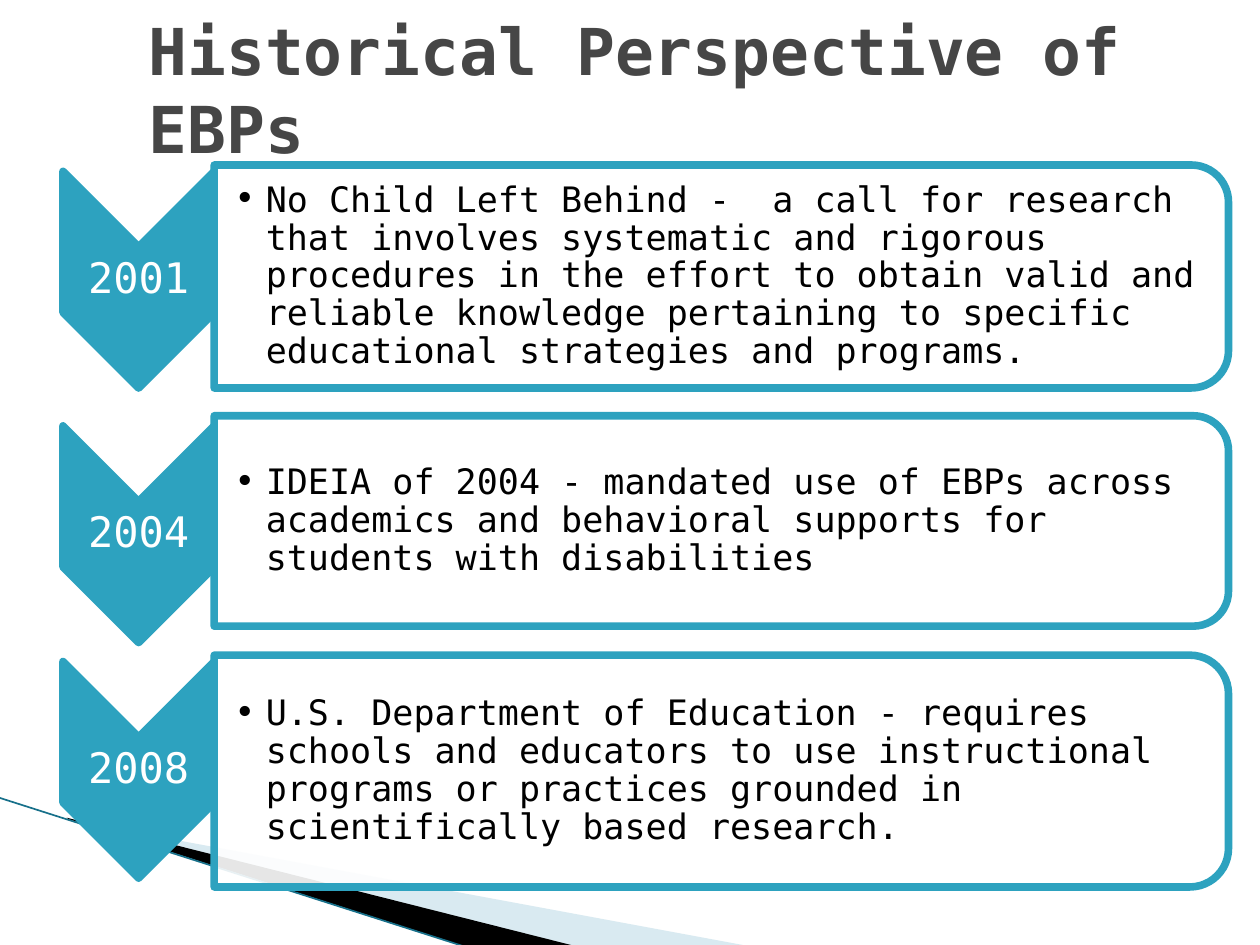
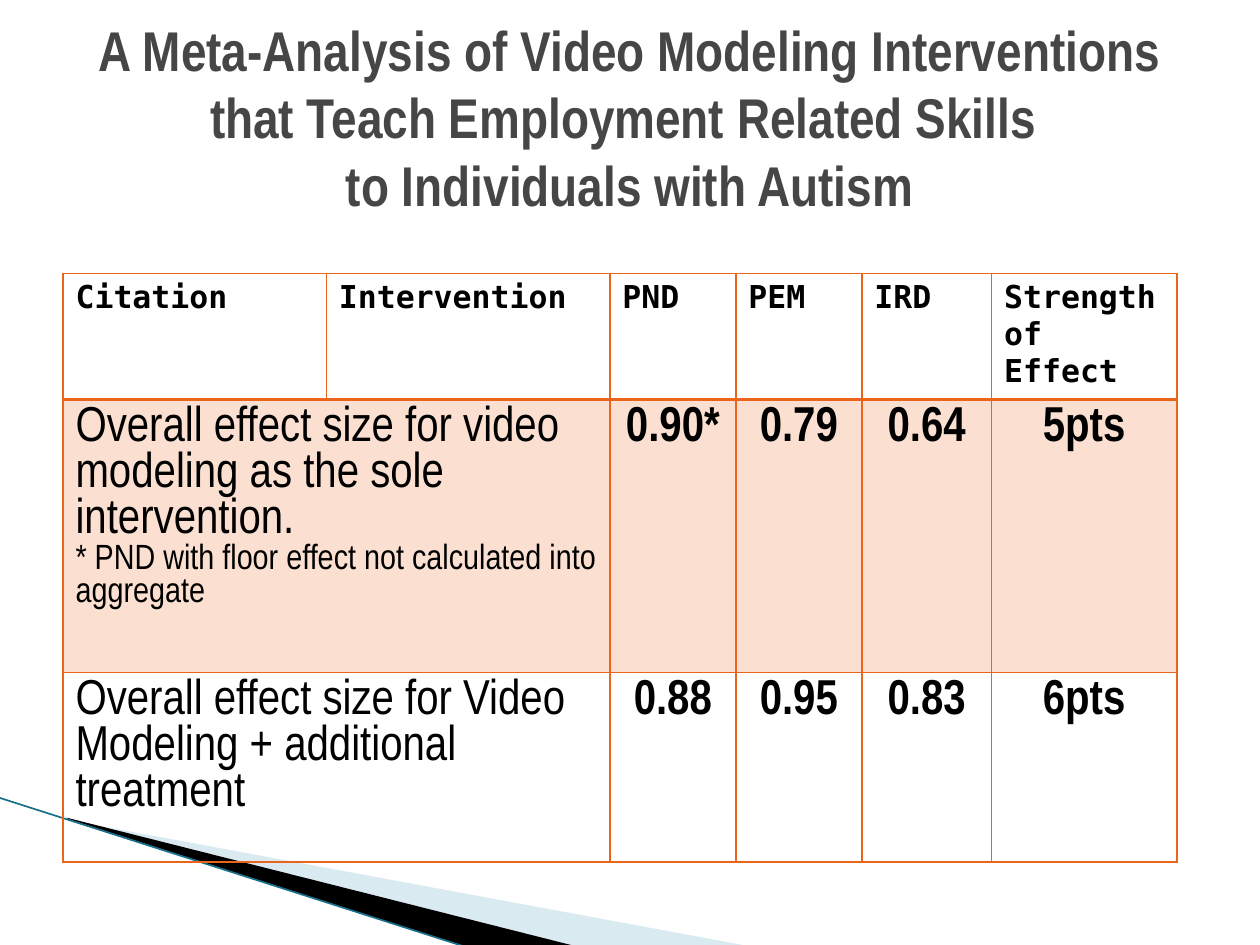
import lxml.etree
import pptx
import pptx.dml.color
import pptx.enum.shapes
import pptx.enum.text
import pptx.oxml.ns
import pptx.util

Inches = pptx.util.Inches
Pt = pptx.util.Pt
qn = pptx.oxml.ns.qn
Shape = pptx.enum.shapes.MSO_SHAPE
Align = pptx.enum.text.PP_ALIGN
Anchor = pptx.enum.text.MSO_ANCHOR

MONO = "DejaVu Sans Mono"
NARROW = "Arial Narrow"
COLORS = {
    "title": "464646", "text": "000000", "white": "FFFFFF",
    "teal": "2DA2BF", "pale": "A0CBDC", "black": "000000", "edge": "17708A",
    "orange": "EB641B", "peach": "FBE0D1",
}


def paint(shape, fill, opacity=100, line=None):
    """Fill a shape, with a line in the given colour or none."""
    shape.shadow.inherit = False
    shape.fill.solid()
    shape.fill.fore_color.rgb = pptx.dml.color.RGBColor.from_string(COLORS[fill])
    if opacity < 100:
        color = shape.element.spPr.find(qn("a:solidFill"))[0]
        lxml.etree.SubElement(color, qn("a:alpha"), val=str(opacity * 1000))
    if line:
        shape.line.color.rgb = pptx.dml.color.RGBColor.from_string(COLORS[line])
        shape.line.width = Pt(4.33)
    else:
        shape.line.fill.background()


def write(frame, texts, name, sizes, color="text", bold=False,
          align=Align.LEFT, spacing=1.0, bullet=False):
    """Write one paragraph for each text, each in its own size."""
    frame.word_wrap = True
    for number, (text, size) in enumerate(zip(texts, sizes)):
        para = frame.add_paragraph() if number else frame.paragraphs[0]
        para.text = text
        para.alignment = align
        para.line_spacing = spacing
        if bullet:
            settings = para._p.get_or_add_pPr()
            settings.set("marL", str(Inches(0.25)))
            settings.set("indent", str(-Inches(0.25)))
            lxml.etree.SubElement(settings, qn("a:buFont"), typeface=name)
            lxml.etree.SubElement(settings, qn("a:buChar"), char="•")
        for span in para.runs:
            values = {"name": name, "size": Pt(size), "bold": bold}
            for key, value in values.items():
                setattr(span.font, key, value)
            span.font.color.rgb = pptx.dml.color.RGBColor.from_string(COLORS[color])


deck = pptx.Presentation()
deck.slide_width = Inches(10)
deck.slide_height = Inches(7.5)

# Shared page: swoosh in the lower left corner and title
swooshes = [
    ("pale", 40, [(0.55, 6.51), (5.95, 7.51), (4.56, 7.51), (0.55, 6.5)]),
    ("black", 100, [(0.53, 6.49), (4.57, 7.51), (3.72, 7.52), (0.54, 6.5)]),
]
titles = [
    ("Historical Perspective of EBPs",
     (1.08, 0.33, 8.17, 0.75), MONO, 36.9, Align.LEFT),
    ("A Meta-Analysis of Video Modeling Interventions that Teach Employment "
     "Related Skills \vto Individuals with Autism",
     (0.5, 0.3, 9, 1.25), NARROW, 32, Align.CENTER),
]
pages = []
for title, place, font_name, size, align in titles:
    page = deck.slides.add_slide(deck.slide_layouts[6])
    pages.append(page)
    for fill, opacity, corners in swooshes:
        points = [(Inches(x), Inches(y)) for x, y in corners]
        outline = page.shapes.build_freeform(*points[0])
        outline.add_line_segments(points[1:], close=True)
        paint(outline.convert_to_shape(), fill, opacity)
    edge = page.shapes.add_connector(
        pptx.enum.shapes.MSO_CONNECTOR.STRAIGHT,
        Inches(-0.01), Inches(6.33), Inches(3.71), Inches(7.52))
    edge.line.color.rgb = pptx.dml.color.RGBColor.from_string(COLORS["edge"])
    edge.line.width = Pt(0.95)
    lxml.etree.SubElement(edge._element.spPr, qn("a:effectLst"))
    box = page.shapes.add_textbox(*map(Inches, place))
    box.text_frame.vertical_anchor = Anchor.MIDDLE
    write(box.text_frame, [title], font_name, [size], "title", True, align)

timeline_page, results_page = pages

# Timeline: a year chevron and a card for each milestone
card_left, card_width = 1.7, 8.05
chevron_length, chevron_width = 1.72, 1.2
milestones = [
    ("2001", 1.36, 1.31, 1.77,
     "No Child Left Behind -  a call for research that involves systematic and "
     "rigorous procedures in the effort to obtain valid and reliable knowledge "
     "pertaining to specific educational strategies and programs."),
    ("2004", 3.38, 3.3, 1.67,
     "IDEIA of 2004 - mandated use of EBPs across academics and behavioral "
     "supports for students with disabilities"),
    ("2008", 5.25, 5.2, 1.84,
     "U.S. Department of Education - requires schools and educators to use "
     "instructional programs or practices grounded in scientifically based "
     "research."),
]
for year, chevron_top, card_top, card_height, text in milestones:
    # Both shapes are turned a quarter, so they are placed by their centres
    turned = [
        (Shape.CHEVRON, 1.1, chevron_top + chevron_length / 2,
         chevron_length, chevron_width, "teal", 100),
        (Shape.ROUND_2_SAME_RECTANGLE, card_left + card_width / 2,
         card_top + card_height / 2, card_height, card_width, "white", 90),
    ]
    for kind, center_x, center_y, width, height, fill, opacity in turned:
        shape = timeline_page.shapes.add_shape(
            kind, Inches(center_x - width / 2), Inches(center_y - height / 2),
            Inches(width), Inches(height))
        shape.rotation = 90
        paint(shape, fill, opacity, "teal")

    labels = [
        (year, (0.5, chevron_top + 0.6, 1.2, 0.52), 0.02, 0.02,
         {"sizes": [24], "color": "white", "align": Align.CENTER}),
        (text, (card_left, card_top + 0.09, 7.96, card_height - 0.18), 0.16, 0.01,
         {"sizes": [20], "bullet": True}),
    ]
    for words, place, left_inset, inset, style in labels:
        box = timeline_page.shapes.add_textbox(*map(Inches, place))
        frame = box.text_frame
        frame.vertical_anchor = Anchor.MIDDLE
        for side in ("left", "top", "right", "bottom"):
            setattr(frame, "margin_" + side,
                    Inches(left_inset if side == "left" else inset))
        write(frame, [words], MONO, spacing=0.9, **style)

# Results table: each cell holds a list of paragraphs, rows grow with their text
column_widths = [2.09, 2.25, 1, 1, 1.03, 1.47]
row_heights = [0.75, 1, 1.19]
rows = [
    [["Citation"], ["Intervention"], ["PND"], ["PEM"], ["IRD"],
     ["Strength of Effect"]],
    [["Overall effect size for video modeling as the sole intervention.",
      "* PND with floor effect not calculated into aggregate"],
     [], ["0.90*"], ["0.79"], ["0.64"], ["5pts"]],
    [["Overall effect size for Video Modeling + additional treatment"],
     [], ["0.88"], ["0.95"], ["0.83"], ["6pts"]],
]
table = results_page.shapes.add_table(
    len(rows), len(column_widths), Inches(0.5), Inches(2.17),
    Inches(sum(column_widths)), Inches(sum(row_heights))).table
table.first_row = False
table.horz_banding = False
for column, width in zip(table.columns, column_widths):
    column.width = Inches(width)
for row, height in zip(table.rows, row_heights):
    row.height = Inches(height)

for row_number, row in enumerate(rows):
    if row_number:
        table.cell(row_number, 0).merge(table.cell(row_number, 1))
    for column_number, texts in enumerate(row):
        cell = table.cell(row_number, column_number)
        if row_number == 0:
            write(cell.text_frame, texts, MONO, [18], bold=True)
        elif column_number == 0:
            write(cell.text_frame, texts, NARROW, [28, 20])
        else:
            write(cell.text_frame, texts, NARROW, [28], bold=True,
                  align=Align.CENTER)

        settings = cell._tc.get_or_add_tcPr()
        for side in ("lnL", "lnR", "lnT", "lnB"):
            heavy = (row_number, side) in [(0, "lnB"), (1, "lnT")]
            border = lxml.etree.SubElement(
                settings, qn("a:" + side), w=str(Pt(2 if heavy else 1)))
            solid = lxml.etree.SubElement(border, qn("a:solidFill"))
            lxml.etree.SubElement(solid, qn("a:srgbClr"), val=COLORS["orange"])
        if row_number == 1:
            cell.fill.solid()
            cell.fill.fore_color.rgb = pptx.dml.color.RGBColor.from_string(
                COLORS["peach"])
        else:
            cell.fill.background()

deck.save("out.pptx")
